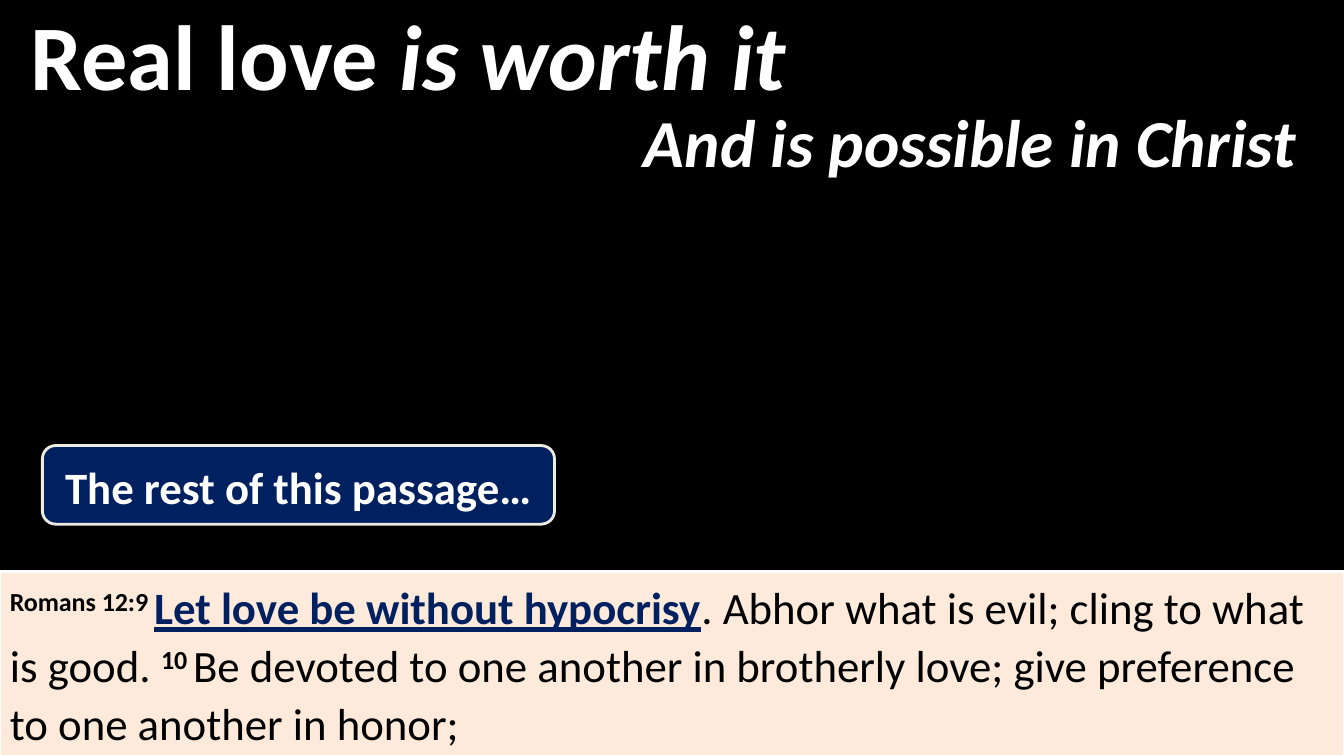
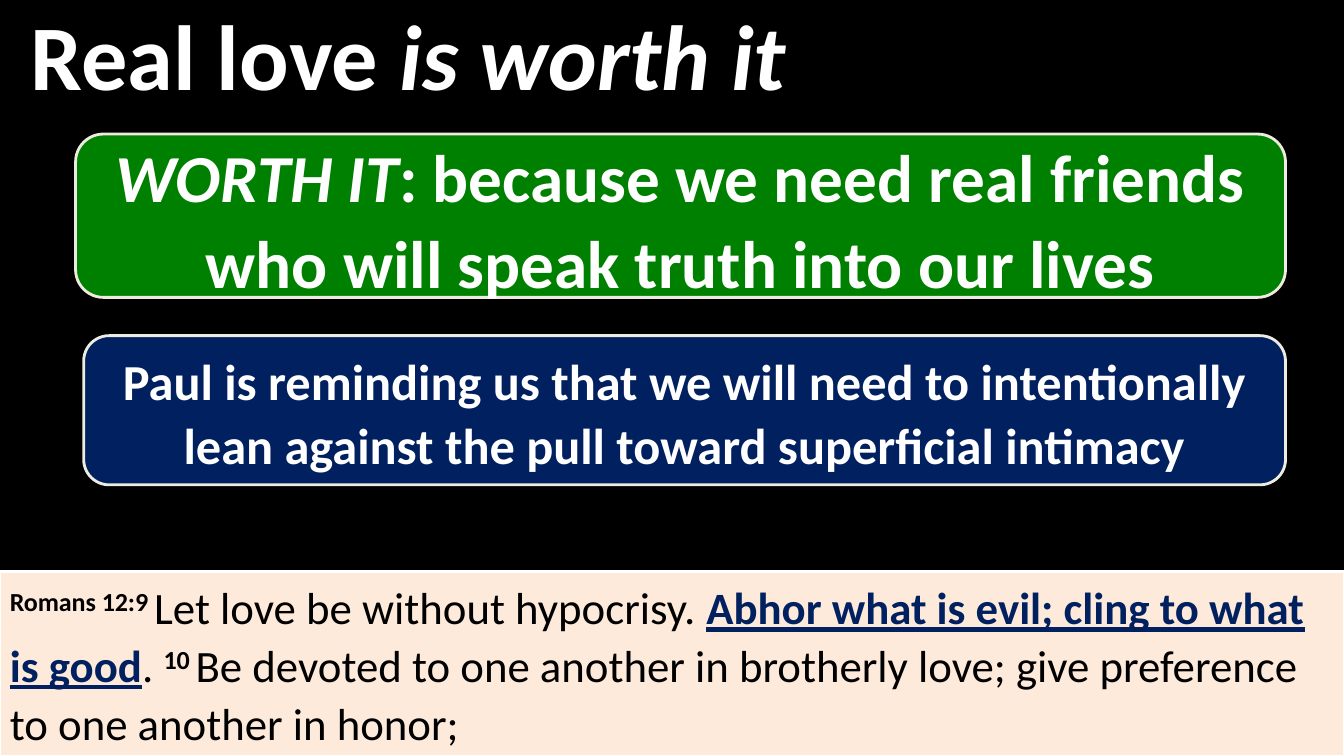
from lxml.etree import SubElement
from pptx import Presentation
from pptx.dml.color import RGBColor
from pptx.enum.shapes import MSO_SHAPE
from pptx.enum.text import MSO_ANCHOR, PP_ALIGN
from pptx.oxml.ns import qn
from pptx.util import Inches, Pt

COLOURS = {
    "black": "000000", "white": "FFFFFF", "cream": "FDEADA",
    "navy": "002060", "green": "008000", "ivory": "EEECE1",
}
FONT = "Calibri"
WIDTH, HEIGHT = 13.33, 7.5
BAND_TOP = 5.67
TITLE_HEIGHT = 1.07
LINE_SPACING = 1.07
CALLOUT_ADJUSTMENTS = (-0.22, 0.5, 0.17)

# Each run is its text followed by the names of its styles.
TITLE = [(" Real love ", "bold"), ("is worth it", "bold", "italic")]
VERSE_9 = ("Romans 12:9 ", "bold", "raised")
VERSE_10 = [
    ("10 ", "bold", "raised"),
    ("Be devoted to one another in brotherly love; "
     "give preference to one another in honor; ",),
]

SLIDES = [
    {
        "passage": [
            VERSE_9,
            ("Let love be without hypocrisy", "bold", "key"),
            (". Abhor what is evil; cling to what is good. ",),
            *VERSE_10,
        ],
        "callouts": [
            {"box": (6.25, 0.98, 6.79, 0.78), "fill": None, "size": 48,
             "align": PP_ALIGN.LEFT,
             "runs": [("And is possible in Christ", "bold", "italic")]},
            {"box": (0.42, 4.42, 5.08, 0.78), "fill": "navy", "size": 32,
             "runs": [("The rest of this passage…", "bold")]},
        ],
    },
    {
        "passage": [
            VERSE_9,
            ("Let love be without hypocrisy. ",),
            ("Abhor what is evil; cling to what is good", "bold", "key"),
            (". ",),
            *VERSE_10,
        ],
        "callouts": [
            {"box": (0.75, 1.33, 12, 1.62), "fill": "green", "size": 48,
             "runs": [("WORTH IT", "bold", "italic"),
                      (": because we need real friends who will speak "
                       "truth into our lives", "bold")]},
            {"box": (0.83, 3.33, 11.92, 1.48), "fill": "navy", "size": 36,
             "runs": [("Paul is reminding us that we will need to "
                       "intentionally lean against the pull toward "
                       "superficial intimacy", "bold")]},
        ],
    },
]


def rgb(name):
    return RGBColor.from_string(COLOURS[name])


def add_panel(slide, preset, box, fill=None, line=None, line_width=2):
    shape = slide.shapes.add_shape(preset, *(Inches(value) for value in box))
    shape.shadow.inherit = False
    if fill:
        shape.fill.solid()
        shape.fill.fore_color.rgb = rgb(fill)
    else:
        shape.fill.background()
    if line:
        shape.line.color.rgb = rgb(line)
        shape.line.width = Pt(line_width)
    else:
        shape.line.fill.background()
    return shape


def write_runs(shape, runs, size, colour="white", align=PP_ALIGN.LEFT,
               anchor=MSO_ANCHOR.MIDDLE, spacing=LINE_SPACING):
    text_frame = shape.text_frame
    text_frame.word_wrap = True
    text_frame.vertical_anchor = anchor
    paragraph = text_frame.paragraphs[0]
    paragraph.alignment = align
    paragraph.line_spacing = spacing
    for text, *styles in runs:
        run = paragraph.add_run()
        run.text = text
        font = run.font
        font.name = FONT
        font.size = Pt(size)
        font.bold = "bold" in styles
        font.italic = "italic" in styles
        font.underline = "key" in styles
        font.color.rgb = rgb("navy" if "key" in styles else colour)
        if "raised" in styles:
            run._r.get_or_add_rPr().set("baseline", "30000")


def add_passage(slide, runs):
    band = add_panel(slide, MSO_SHAPE.RECTANGLE,
                     (0, BAND_TOP, WIDTH, HEIGHT - BAND_TOP),
                     "cream", "white", 1.5)
    write_runs(band, runs, 32, "black", anchor=MSO_ANCHOR.TOP)


def add_title(slide):
    bar = add_panel(slide, MSO_SHAPE.RECTANGLE,
                    (0, 0, WIDTH, TITLE_HEIGHT), "black")
    fill_colour = bar._element.spPr.find(qn("a:solidFill"))[0]
    SubElement(fill_colour, qn("a:alpha")).set("val", "64000")
    write_runs(bar, TITLE, 66, spacing=1.0)


def add_callout(slide, box, fill, size, runs, align=PP_ALIGN.CENTER):
    callout = add_panel(slide, MSO_SHAPE.ROUNDED_RECTANGULAR_CALLOUT, box,
                        fill, "ivory" if fill else None)
    for index, value in enumerate(CALLOUT_ADJUSTMENTS):
        callout.adjustments[index] = value
    write_runs(callout, runs, size, align=align)


def main():
    presentation = Presentation()
    presentation.slide_width = Inches(WIDTH)
    presentation.slide_height = Inches(HEIGHT)
    for content in SLIDES:
        slide = presentation.slides.add_slide(presentation.slide_layouts[6])
        slide.background.fill.solid()
        slide.background.fill.fore_color.rgb = rgb("black")
        add_passage(slide, content["passage"])
        add_title(slide)
        for callout in content["callouts"]:
            add_callout(slide, **callout)
    presentation.save("out.pptx")


if __name__ == "__main__":
    main()
